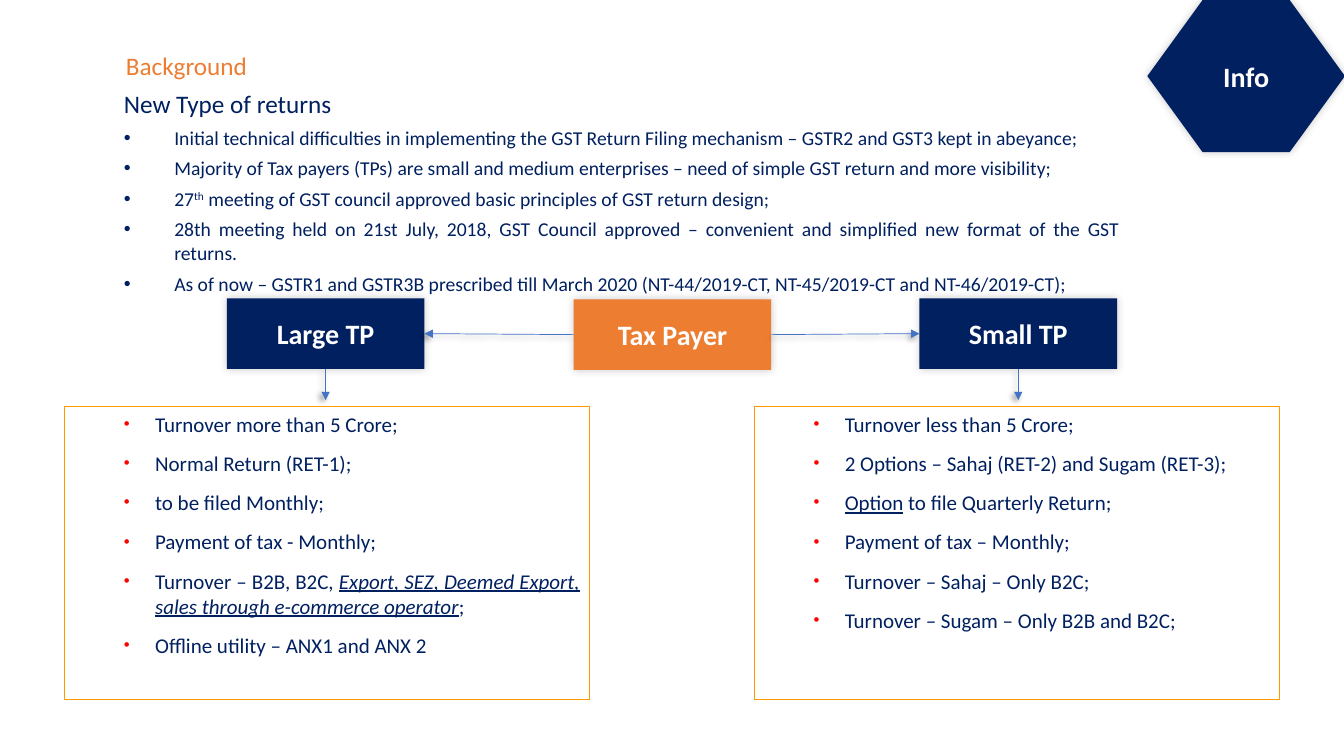
from lxml import etree
from pptx import Presentation
from pptx.dml.color import RGBColor
from pptx.enum import shapes, text
from pptx.oxml import ns
from pptx.util import Inches, Pt

COLORS = {"navy": "002060", "orange": "ED7D31", "border": "FF9900",
          "arrow": "4472C4", "bullet": "FF0000", "white": "FFFFFF", "shadow": "000000"}
FONT = "Calibri"

# Content: a paragraph is a list of (words, style) runs
heading = "Background"
subheading = "New Type of returns"
background = [
    [("Initial technical difficulties in implementing the GST Return Filing mechanism – "
      "GSTR2 and GST3 kept in abeyance;", "")],
    [("Majority of Tax payers (TPs) are small and medium enterprises – "
      "need of simple GST return and more visibility;", "")],
    [("27", ""), ("th", "super"),
     (" meeting of GST council approved basic principles of GST return design;", "")],
    [("28th meeting held on 21st July, 2018, GST Council approved – "
      "convenient and simplified new format of the GST returns.", "")],
    [("As of now – GSTR1 and GSTR3B prescribed till March 2020 "
      "(NT-44/2019-CT, NT-45/2019-CT and NT-46/2019-CT);", "")],
]
large_rules = [
    [("Turnover more than 5 Crore;", "")],
    [("Normal Return (RET-1);", "")],
    [("to be filed Monthly;", "")],
    [("Payment of tax - Monthly;", "")],
    [("Turnover – B2B, B2C, ", ""),
     ("Export, SEZ, Deemed Export, sales through e-commerce operator", "italic underline"),
     (";", "")],
    [("Offline utility – ANX1 and ANX 2", "")],
]
small_rules = [
    [("Turnover less than 5 Crore;", "")],
    [("2 Options – Sahaj (RET-2) and Sugam (RET-3);", "")],
    [("Option", "underline"), (" to file Quarterly Return;", "")],
    [("Payment of tax – Monthly;", "")],
    [("Turnover – Sahaj – Only B2C;", "")],
    [("Turnover – Sugam – Only B2B and B2C;", "")],
]

# Layout in inches
NODE_W, NODE_H = 1.96, 0.7
RULES_TOP, RULES_W, RULES_H = 4.03, 5.21, 2.91
ARROW_END = 3.97

deck = Presentation()
deck.slide_width, deck.slide_height = Inches(13.33), Inches(7.5)
slide = deck.slides.add_slide(deck.slide_layouts[6])


def rgb(name):
    return RGBColor.from_string(COLORS[name])


def add_shadow(part, alpha, blur, distance, angle):
    properties = part._element.spPr
    for old in properties.findall(ns.qn("a:effectLst")):
        properties.remove(old)
    effects = etree.SubElement(properties, ns.qn("a:effectLst"))
    outer = etree.SubElement(effects, ns.qn("a:outerShdw"), blurRad=str(Pt(blur)),
                             dist=str(Pt(distance)), dir=str(angle * 60000),
                             algn="ctr", rotWithShape="0")
    color = etree.SubElement(outer, ns.qn("a:srgbClr"), val=COLORS["shadow"])
    etree.SubElement(color, ns.qn("a:alpha"), val=str(alpha * 1000))


def set_font(paragraph, size, color, bold=False):
    font = paragraph.font
    font.name, font.size, font.bold = FONT, Pt(size), bold
    font.color.rgb = rgb(color)


def add_node(label, left, top, height=NODE_H, fill="navy", kind="RECTANGLE"):
    node = slide.shapes.add_shape(shapes.MSO_SHAPE[kind], Inches(left), Inches(top),
                                  Inches(NODE_W), Inches(height))
    node.fill.solid()
    node.fill.fore_color.rgb = rgb(fill)
    node.line.fill.background()
    add_shadow(node, 20, 6, 0, 225)
    frame = node.text_frame
    frame.vertical_anchor = text.MSO_ANCHOR.MIDDLE
    paragraph = frame.paragraphs[0]
    paragraph.text = label
    paragraph.alignment = text.PP_ALIGN.CENTER
    set_font(paragraph, 20, "white", bold=True)
    return node


def add_text_box(left, top, width, height):
    frame = slide.shapes.add_textbox(Inches(left), Inches(top),
                                     Inches(width), Inches(height)).text_frame
    frame.word_wrap = True
    return frame


def fill_paragraph(paragraph, runs, size, before, indent, hanging=0, bullet_color=None):
    paragraph.alignment = text.PP_ALIGN.JUSTIFY
    paragraph.space_before = Pt(before)
    set_font(paragraph, size, "navy")
    for words, style in runs:
        run = paragraph.add_run()
        run.text = words
        if "italic" in style:
            run.font.italic = True
        if "underline" in style:
            run.font.underline = True
        if "super" in style:
            run.font._element.set("baseline", "30000")
    properties = paragraph._p.get_or_add_pPr()
    properties.set("marL", str(Inches(indent)))
    properties.set("indent", str(Inches(-hanging)))
    if not hanging:
        return
    # Bullet elements go ahead of the default run properties
    bullet = []
    if bullet_color:
        tint = etree.Element(ns.qn("a:buClr"))
        etree.SubElement(tint, ns.qn("a:srgbClr"), val=COLORS[bullet_color])
        bullet += [tint, etree.Element(ns.qn("a:buSzPct"), val="80000")]
    bullet += [etree.Element(ns.qn("a:buFont"), typeface="Arial"),
               etree.Element(ns.qn("a:buChar"), char="•")]
    defaults = properties.find(ns.qn("a:defRPr"))
    for element in bullet:
        defaults.addprevious(element)


def add_rules(left, rules):
    box = slide.shapes.add_shape(shapes.MSO_SHAPE.RECTANGLE, Inches(left), Inches(RULES_TOP),
                                 Inches(RULES_W), Inches(RULES_H))
    box.shadow.inherit = False
    box.fill.background()
    box.line.color.rgb = rgb("border")
    box.line.width = Pt(0.75)
    frame = box.text_frame
    frame.vertical_anchor = text.MSO_ANCHOR.TOP
    for i, runs in enumerate(rules):
        paragraph = frame.add_paragraph() if i else frame.paragraphs[0]
        fill_paragraph(paragraph, runs, 15, 10, 0.8, 0.31, "bullet")


def add_arrow(source, source_side, target=None, target_side=None):
    center = source.left + source.width // 2
    arrow = slide.shapes.add_connector(shapes.MSO_CONNECTOR.STRAIGHT, center,
                                       source.top, center, Inches(ARROW_END))
    arrow.begin_connect(source, source_side)
    if target is not None:
        arrow.end_connect(target, target_side)
    arrow.line.color.rgb = rgb("arrow")
    arrow.line.width = Pt(0.5)
    etree.SubElement(arrow.line._get_or_add_ln(), ns.qn("a:tailEnd"), type="triangle")
    add_shadow(arrow, 40, 4, 3, 135)


# Corner badge
badge = add_node("Info", 11.38, 0, height=1.51, kind="HEXAGON")
badge.adjustments[0] = 0.363

# Heading
title = add_text_box(1.15, 0.48, 3.06, 0.38).paragraphs[0]
title.text = heading
title.line_spacing = 0.9
set_font(title, 18, "orange")

# Background points
body = add_text_box(0.64, 0.83, 10.57, 5.65)
fill_paragraph(body.paragraphs[0], [(subheading, "")], 18, 10, 0.49)
for point in background:
    line = body.add_paragraph()
    line.level = 1
    fill_paragraph(line, point, 14, 5, 0.99, 0.5)

# Taxpayer split
tax_payer = add_node("Tax Payer", 5.69, 2.97, fill="orange")
large = add_node("Large TP", 2.25, 2.96)
small = add_node("Small TP", 9.12, 2.96)
add_arrow(tax_payer, 1, large, 3)
add_arrow(tax_payer, 3, small, 1)

# Rules for each group
for group, rules_left, rules in ((large, 0.64, large_rules), (small, 7.48, small_rules)):
    add_rules(rules_left, rules)
    add_arrow(group, 2)

deck.save("out.pptx")
